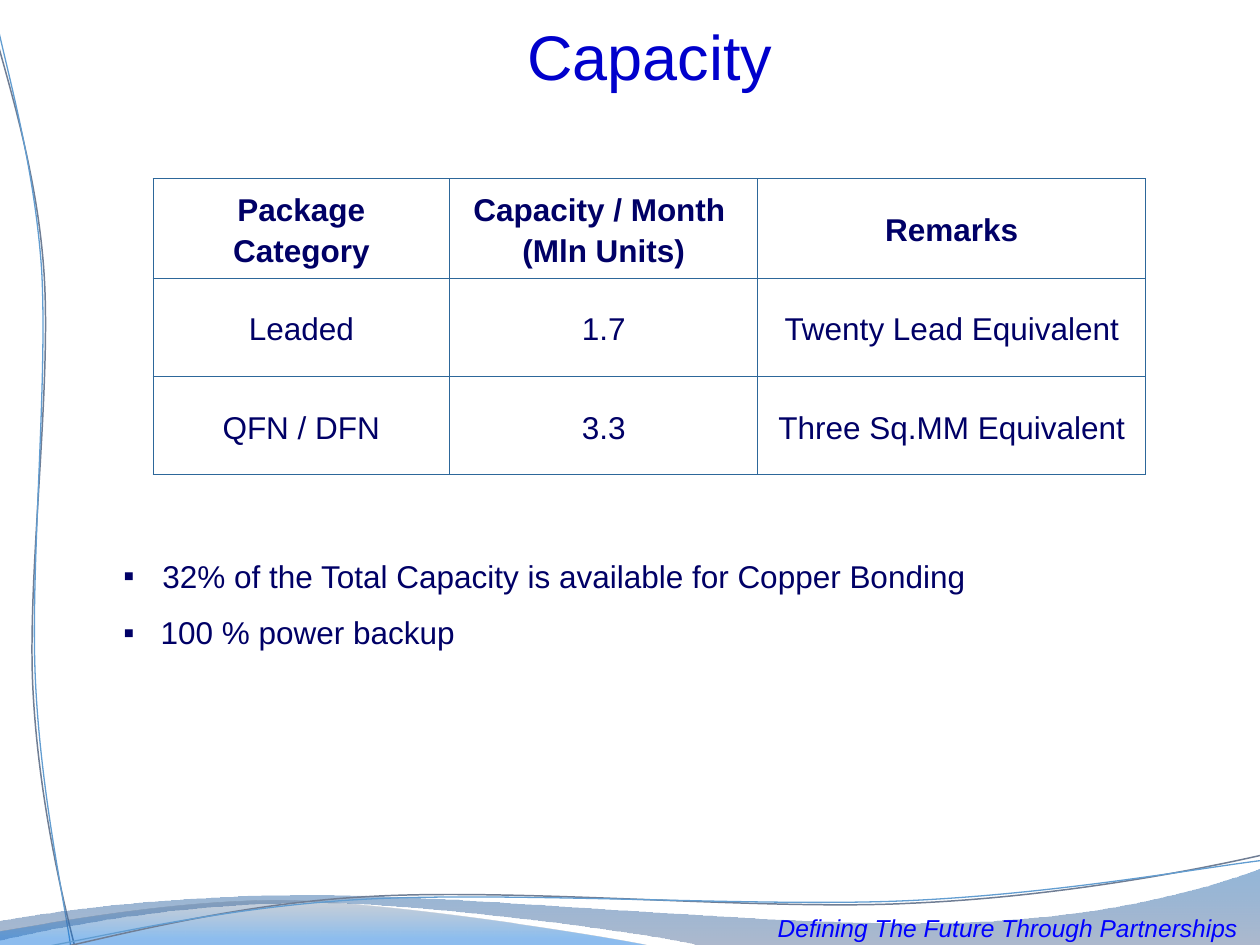
from pptx import Presentation
from pptx.dml.color import RGBColor
from pptx.enum.text import MSO_ANCHOR, MSO_AUTO_SIZE, PP_ALIGN
from pptx.oxml.ns import qn
from pptx.util import Pt
from lxml.etree import SubElement

FONT = "Arial"
TITLE_BLUE = RGBColor(0x00, 0x00, 0xCC)
TAGLINE_BLUE = RGBColor(0x00, 0x00, 0xFF)
NAVY = RGBColor(0x00, 0x00, 0x66)
BORDER_BLUE = RGBColor(0x2D, 0x67, 0x9A)
CURVE_GREY = RGBColor(0x70, 0x7E, 0x95)
CURVE_BLUE = RGBColor(0x62, 0x9D, 0xD1)
# Gradient stops from top to bottom: position, colour, opacity in percent
BACK_WAVE_STOPS = [(0, RGBColor(0x12, 0x5E, 0xAA), 45),
                   (1, RGBColor(0x69, 0x7F, 0xA4), 55)]
FRONT_WAVE_STOPS = [(0, RGBColor(0x59, 0x69, 0x82), 30),
                    (0.8, RGBColor(0x06, 0x70, 0xDA), 45)]

# Paths: a start point, then segments of one point (line) or three (Bezier)
SIDE_GREY = [(42.5, 540),
             [(36, 514.1), (21.6, 455), (18.7, 391)],
             [(15.8, 326.9), (29.5, 221), (25.2, 156.2)],
             [(20.9, 91.4), (0, 33.8), (-7.2, 2.2)]]
SIDE_BLUE = [(40.3, 540),
             [(36.7, 514.8), (23, 451.4), (20.2, 387.4)],
             [(17.3, 323.3), (27.4, 218.2), (23.8, 154.1)],
             [(19.4, 89.3), (1.4, 32.4), (-4.3, 0.7)]]
BACK_WAVE = [(719.3, 540.7),
             [(402.5, 540.7)],
             [(377.3, 533.5), (241.9, 515.5), (173.5, 515.5)],
             [(105.1, 515.5), (29.5, 529.9), (-0.7, 537.1)],
             [(-1.4, 526.3)],
             [(11.5, 523.4), (93.6, 510.5), (182.2, 511.2)],
             [(271.4, 511.2), (445, 529.2), (534.2, 527)],
             [(626.4, 526.3), (686.2, 508.3), (720, 496.1)],
             [(719.3, 540.7)]]
FRONT_WAVE = [(374.4, 540.7),
              [(352.8, 535.7), (228.2, 516.2), (166.3, 514.8)],
              [(103.7, 513.4), (27.4, 527.8), (-0.7, 532.1)],
              [(-0.7, 540)],
              [(374.4, 540.7)]]
BOTTOM_GREY = [(720, 488.9),
               [(685.4, 496.8), (605.5, 512.6), (519.8, 516.2)],
               [(434.9, 520.6), (293.8, 506.9), (206.6, 512.6)],
               [(120.2, 517.7), (43.2, 541.4), (0.7, 548.6)]]
BOTTOM_BLUE = [(720, 491.8),
               [(685.4, 496.1), (601.2, 511.2), (515.5, 514.8)],
               [(429.1, 518.4), (290.2, 509), (203.8, 514.1)],
               [(118.1, 519.1), (41.8, 539.3), (-0.7, 545.8)]]

COLUMN_WIDTHS = [169.6, 176, 221.8]
ROW_HEIGHT = 56.2
CAPACITY_ROWS = [
    [["Package Category"], ["Capacity / Month ", "(Mln Units)"], ["Remarks"]],
    [["Leaded"], ["1.7"], ["Twenty Lead Equivalent"]],
    [["QFN / DFN"], ["3.3"], ["Three Sq.MM Equivalent"]],
]
# Bullet text, indent and line spacing
BULLETS = [("32% of the Total Capacity is available for Copper Bonding", 22.3, 1),
           ("100 % power backup", 21.3, 1.5)]


def add_path(slide, path, close):
    """Draw a freeform, then join its point triples into Bezier segments."""
    start, *segments = path
    builder = slide.shapes.build_freeform(Pt(start[0]), Pt(start[1]))
    builder.add_line_segments(
        [(Pt(x), Pt(y)) for segment in segments for x, y in segment],
        close=close)
    shape = builder.convert_to_shape()
    shape.shadow.inherit = False
    lines = shape._element.spPr.iter(qn("a:lnTo"))
    lines = iter(list(lines))
    for segment in segments:
        parts = [next(lines) for _ in segment]
        if len(parts) == 3:
            curve = parts[0].makeelement(qn("a:cubicBezTo"), {})
            parts[0].addprevious(curve)
            for part in parts:
                curve.append(part[0])
                part.getparent().remove(part)
    return shape


def add_curve(slide, path, color, width):
    shape = add_path(slide, path, close=False)
    shape.fill.background()
    shape.line.color.rgb = color
    shape.line.width = Pt(width)


def add_wave(slide, path, stops):
    shape = add_path(slide, path, close=True)
    shape.line.fill.background()
    shape.fill.gradient()
    shape.fill.gradient_angle = 270
    for stop, (position, color, _) in zip(shape.fill.gradient_stops, stops):
        stop.position = position
        stop.color.rgb = color
    colors = shape._element.spPr.iter(qn("a:srgbClr"))
    for color_element, (_, _, opacity) in zip(colors, stops):
        SubElement(color_element, qn("a:alpha"), val=str(opacity * 1000))


def add_run(paragraph, text, size, color, bold=False, italic=False):
    run = paragraph.add_run()
    run.text = text
    run.font.name = FONT
    run.font.size = Pt(size)
    run.font.color.rgb = color
    run.font.bold = bold
    run.font.italic = italic


def add_text_box(slide, left, top, width, height):
    frame = slide.shapes.add_textbox(
        Pt(left), Pt(top), Pt(width), Pt(height)).text_frame
    frame.word_wrap = True
    return frame


def format_title(slide):
    title = slide.shapes.title
    title.left, title.top, title.width, title.height = (
        Pt(146.2), Pt(6.2), Pt(450), Pt(51))
    title.text_frame.auto_size = MSO_AUTO_SIZE.NONE
    title.text_frame.vertical_anchor = MSO_ANCHOR.TOP
    paragraph = title.text_frame.paragraphs[0]
    paragraph.alignment = PP_ALIGN.CENTER
    add_run(paragraph, "Capacity", 36, TITLE_BLUE)


def add_tagline(slide):
    paragraph = add_text_box(slide, 375.8, 518.4, 400.3, 13).paragraphs[0]
    paragraph.alignment = PP_ALIGN.CENTER
    add_run(paragraph, "Defining The Future Through Partnerships", 14,
            TAGLINE_BLUE, italic=True)


def add_bullets(slide):
    frame = add_text_box(slide, 63.4, 314.6, 615.6, 57.6)
    for index, (text, indent, spacing) in enumerate(BULLETS):
        paragraph = frame.add_paragraph() if index else frame.paragraphs[0]
        properties = paragraph._p.get_or_add_pPr()
        properties.set("marL", str(Pt(indent)))
        properties.set("indent", str(-Pt(indent)))
        SubElement(properties, qn("a:buFont"), typeface=FONT)
        SubElement(properties, qn("a:buChar"), char="▪")
        paragraph.line_spacing = spacing
        add_run(paragraph, text, 18, NAVY)


def set_borders(cell):
    properties = cell._tc.get_or_add_tcPr()
    for index, side in enumerate(("lnL", "lnR", "lnT", "lnB")):
        line = properties.makeelement(qn(f"a:{side}"), {"w": str(Pt(0.5))})
        fill = SubElement(line, qn("a:solidFill"))
        SubElement(fill, qn("a:srgbClr"), val=str(BORDER_BLUE))
        properties.insert(index, line)


def fill_cell(cell, lines, bold):
    cell.fill.background()
    set_borders(cell)
    cell.vertical_anchor = MSO_ANCHOR.MIDDLE
    for index, text in enumerate(lines):
        frame = cell.text_frame
        paragraph = frame.add_paragraph() if index else frame.paragraphs[0]
        paragraph.alignment = PP_ALIGN.CENTER
        paragraph.line_spacing = 1.15
        add_run(paragraph, text, 18, NAVY, bold=bold)


def add_capacity_table(slide):
    row_count = len(CAPACITY_ROWS)
    table = slide.shapes.add_table(
        row_count, len(COLUMN_WIDTHS), Pt(87.4), Pt(102),
        Pt(sum(COLUMN_WIDTHS)), Pt(ROW_HEIGHT * row_count)).table
    table.horz_banding = False
    for column, width in zip(table.columns, COLUMN_WIDTHS):
        column.width = Pt(width)
    for row_index, row in enumerate(CAPACITY_ROWS):
        table.rows[row_index].height = Pt(ROW_HEIGHT)
        for column_index, lines in enumerate(row):
            fill_cell(table.cell(row_index, column_index), lines,
                      bold=row_index == 0)


def main():
    presentation = Presentation()
    presentation.slide_width, presentation.slide_height = Pt(720), Pt(540)
    slide = presentation.slides.add_slide(presentation.slide_layouts[5])

    # Decorative curves and waves
    add_curve(slide, SIDE_GREY, CURVE_GREY, 0.85)
    add_curve(slide, SIDE_BLUE, CURVE_BLUE, 0.75)
    add_wave(slide, BACK_WAVE, BACK_WAVE_STOPS)
    add_wave(slide, FRONT_WAVE, FRONT_WAVE_STOPS)
    add_curve(slide, BOTTOM_GREY, CURVE_GREY, 0.85)
    add_curve(slide, BOTTOM_BLUE, CURVE_BLUE, 0.75)

    # Content
    add_tagline(slide)
    format_title(slide)
    add_bullets(slide)
    add_capacity_table(slide)
    presentation.save("out.pptx")


if __name__ == "__main__":
    main()
